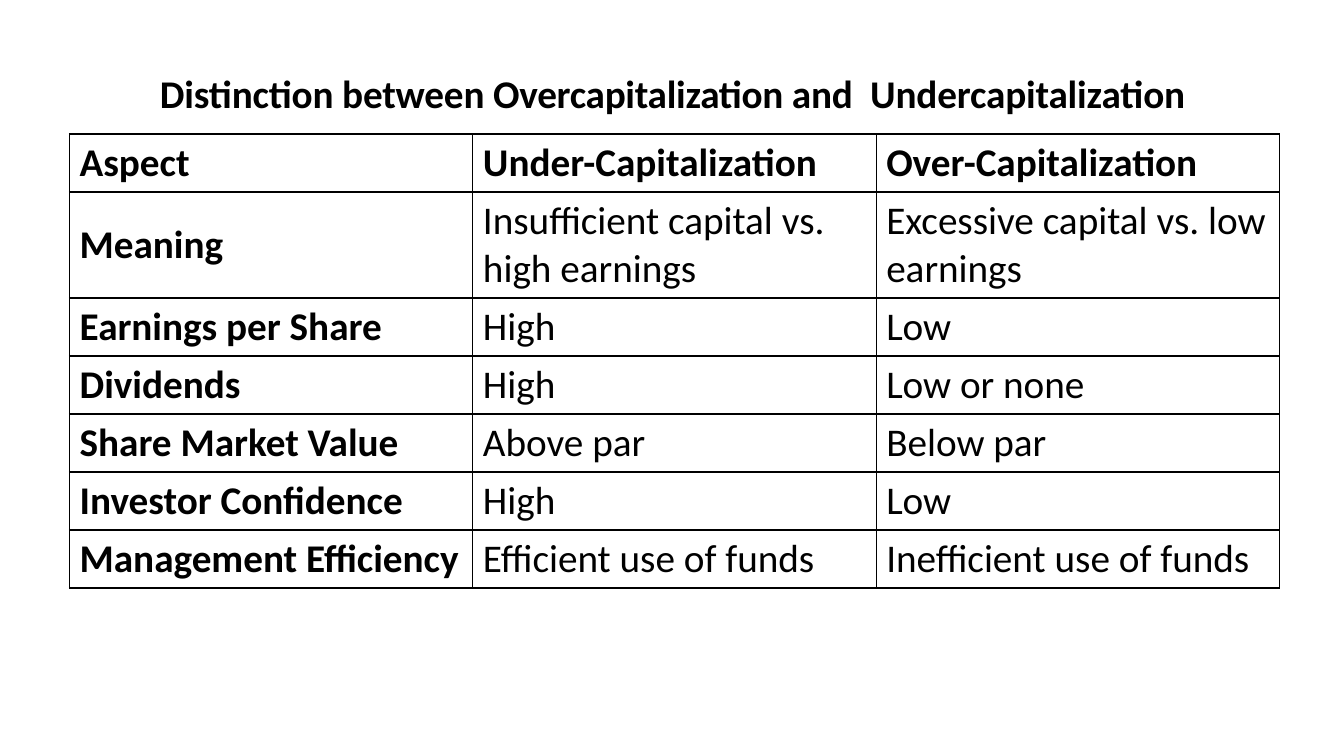
import dataclasses

import pptx
import pptx.dml.color
import pptx.enum.text
import pptx.oxml
import pptx.oxml.ns
import pptx.util
from pptx.util import Inches


@dataclasses.dataclass(frozen=True)
class Theme:
    font: str = "Calibri"
    size: int = 28
    ink: str = "000000"
    background: str = "FFFFFF"
    border_width: int = 1


THEME = Theme()
TITLE_RUNS = [
    ("Distinction between ", -0.1),
    ("Overcapitalization ", -0.2),
    ("and  Undercapitalization", -0.1),
]
ROWS = [
    ("Aspect", "Under-Capitalization", "Over-Capitalization"),
    ("Meaning", "Insufficient capital vs. high earnings",
     "Excessive capital vs. low earnings"),
    ("Earnings per Share", "High", "Low"),
    ("Dividends", "High", "Low or none"),
    ("Share Market Value", "Above par", "Below par"),
    ("Investor Confidence", "High", "Low"),
    ("Management Efficiency", "Efficient use of funds", "Inefficient use of funds"),
]
MEANING_ROW = 1
ROW_HEIGHT = 0.57
MEANING_HEIGHT = 1.05


def rgb(color):
    return pptx.dml.color.RGBColor.from_string(color)


def format_run(r, bold):
    r.font.name = THEME.font
    r.font.size = pptx.util.Pt(THEME.size)
    r.font.bold = bold
    r.font.color.rgb = rgb(THEME.ink)


def add_title(slide):
    title = slide.shapes.title
    title.left, title.top = Inches(0.67), Inches(0.3)
    title.width, title.height = Inches(12), Inches(1.25)
    tf = title.text_frame
    tf.word_wrap = True
    tf.vertical_anchor = pptx.enum.text.MSO_ANCHOR.MIDDLE
    p = tf.paragraphs[0]
    p.alignment = pptx.enum.text.PP_ALIGN.CENTER
    for text, spacing in TITLE_RUNS:
        r = p.add_run()
        r.text = text
        format_run(r, bold=True)
        r.font._element.set("spc", str(round(spacing * 100)))


def set_borders(cell):
    """Draw all four sides; call before the fill, which must follow them in the XML."""
    width = pptx.util.Pt(THEME.border_width)
    tcPr = cell._tc.get_or_add_tcPr()
    for side in ("lnL", "lnR", "lnT", "lnB"):
        tcPr.append(pptx.oxml.parse_xml(
            f'<a:{side} {pptx.oxml.ns.nsdecls("a")} w="{width}">'
            f'<a:solidFill><a:srgbClr val="{THEME.ink}"/></a:solidFill>'
            f'</a:{side}>'))


def fill_cell(cell, text, bold):
    cell.text_frame.text = text
    cell.vertical_anchor = pptx.enum.text.MSO_ANCHOR.MIDDLE
    format_run(cell.text_frame.paragraphs[0].runs[0], bold)
    set_borders(cell)
    cell.fill.background()


def add_comparison_table(slide):
    height = ROW_HEIGHT * (len(ROWS) - 1) + MEANING_HEIGHT
    table = slide.shapes.add_table(
        len(ROWS), len(ROWS[0]),
        Inches(0.69), Inches(1.33), Inches(12), Inches(height)).table
    table.first_row = False
    table.horz_banding = False
    for i, texts in enumerate(ROWS):
        table.rows[i].height = Inches(MEANING_HEIGHT if i == MEANING_ROW else ROW_HEIGHT)
        for j, text in enumerate(texts):
            fill_cell(table.cell(i, j), text, bold=i == 0 or j == 0)


def main():
    prs = pptx.Presentation()
    prs.slide_width, prs.slide_height = Inches(13.33), Inches(7.5)
    slide = prs.slides.add_slide(prs.slide_layouts[5])
    slide.background.fill.solid()
    slide.background.fill.fore_color.rgb = rgb(THEME.background)
    add_title(slide)
    add_comparison_table(slide)
    prs.save("out.pptx")


if __name__ == "__main__":
    main()
